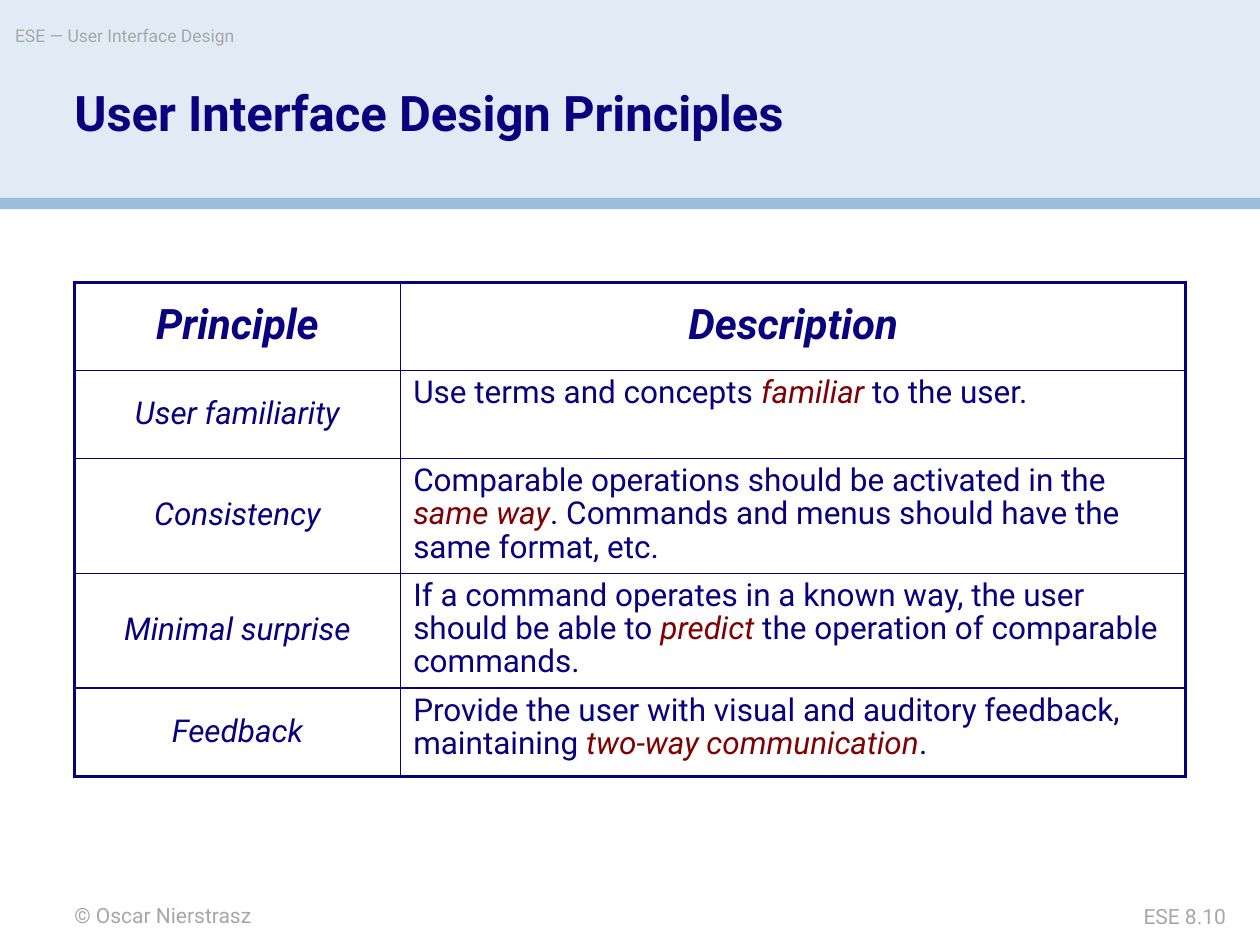
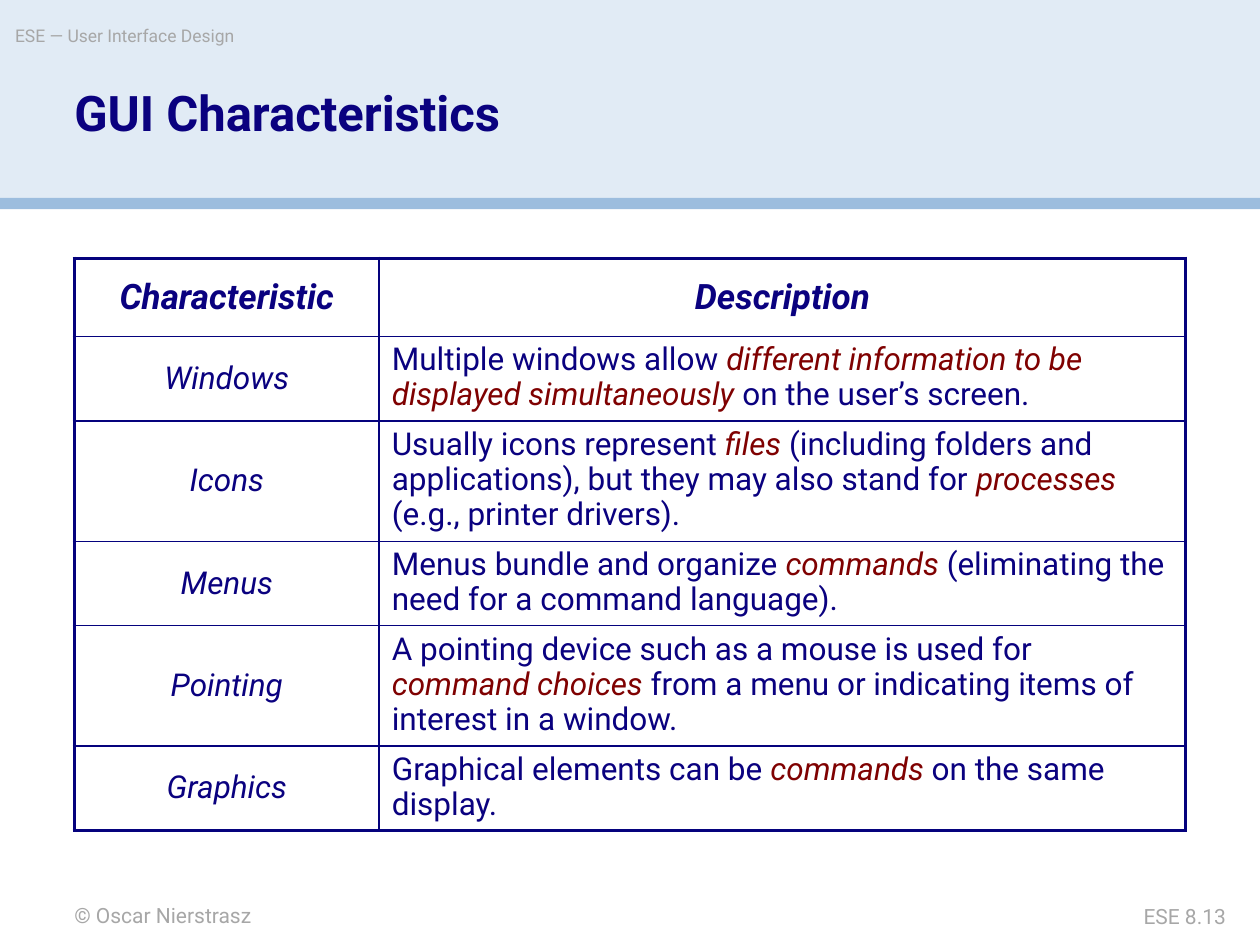
"""Builds two slides on user interface design, each with a table of terms and descriptions."""
from lxml.etree import SubElement
from pptx import Presentation
from pptx.dml.color import RGBColor
from pptx.enum.shapes import MSO_SHAPE
from pptx.enum.text import MSO_ANCHOR, PP_ALIGN
from pptx.oxml.ns import qn
from pptx.util import Inches, Pt

FONT = "Roboto"
NAVY, MAROON, GREY, RULE = "0A017F", "7F0101", "A7A7A7", "05027D"
BANDS = [(0, 1.58, "E1EBF5"), (1.57, 0.09, "9CBDDE")]
MARGIN = 0.59
THIN, THICK = 1, 2.25

SLIDES = [
    {
        "title": "User Interface Design Principles",
        "number": "ESE 8.10",
        "top": 2.24,
        "columns": [2.59, 6.23],
        "heights": [0.7, 0.7, 0.89, 0.89, 0.7],
        "heading_size": 24,
        "spacing": 0.9,
        "rows": [
            ("Principle", "Description"),
            ("User familiarity", "Use terms and concepts *familiar* to the user."),
            ("Consistency", "Comparable operations should be activated in the *same way*. "
             "Commands and menus should have the same format, etc."),
            ("Minimal surprise", "If a command operates in a known way, the user should be "
             "able to *predict* the operation of comparable commands."),
            ("Feedback", "Provide the user with visual and auditory feedback, "
             "maintaining *two-way communication*."),
        ],
    },
    {
        "title": "GUI Characteristics",
        "number": "ESE 8.13",
        "top": 2.05,
        "columns": [2.42, 6.4],
        "heights": [0.62, 0.66, 0.94, 0.66, 0.94, 0.66],
        "heading_size": 20,
        "spacing": 0.95,
        "rows": [
            ("Characteristic", "Description"),
            ("Windows", "Multiple windows allow *different information to be displayed "
             "simultaneously* on the user’s screen."),
            ("Icons", "Usually icons represent *files* (including folders and applications), "
             "but they may also stand for *processes* (e.g., printer drivers)."),
            ("Menus", "Menus bundle and organize *commands* (eliminating the need for "
             "a command language)."),
            ("Pointing", "A pointing device such as a mouse is used for *command choices* "
             "from a menu or indicating items of interest in a window."),
            ("Graphics", "Graphical elements can be *commands* on the same display."),
        ],
    },
]


def rgb(hex_colour):
    return RGBColor.from_string(hex_colour)


def add_run(paragraph, text, size, colour, bold=False, italic=False):
    run = paragraph.add_run()
    run.text = text
    run.font.name = FONT
    run.font.size = Pt(size)
    run.font.bold = bold
    run.font.italic = italic
    run.font.color.rgb = rgb(colour)


deck = Presentation()
deck.slide_width, deck.slide_height = Inches(10), Inches(7.5)

for content in SLIDES:
    slide = deck.slides.add_slide(deck.slide_layouts[6])

    for top, height, colour in BANDS:
        band = slide.shapes.add_shape(
            MSO_SHAPE.RECTANGLE, 0, Inches(top), deck.slide_width, Inches(height))
        band.shadow.inherit = False
        band.fill.solid()
        band.fill.fore_color.rgb = rgb(colour)
        band.line.fill.background()

    labels = [
        ("© Oscar Nierstrasz", (MARGIN, 7.16, 4.17, 0.2), 12, GREY, PP_ALIGN.LEFT, None),
        ("ESE — User Interface Design", (0.12, 0.2, 5.9, 0.28), 10, GREY, PP_ALIGN.LEFT, None),
        (content["number"], (8.25, 7.17, 1.48, 0.2), 12, GREY, PP_ALIGN.RIGHT, None),
        (content["title"], (MARGIN, 0.71, 7.24, 0.89), 28, NAVY, PP_ALIGN.LEFT, 0.9),
    ]
    for text, place, size, colour, alignment, spacing in labels:
        frame = slide.shapes.add_textbox(*map(Inches, place)).text_frame
        frame.word_wrap = True
        frame.margin_left = frame.margin_right = frame.margin_top = frame.margin_bottom = 0
        paragraph = frame.paragraphs[0]
        paragraph.alignment = alignment
        paragraph.line_spacing = spacing
        add_run(paragraph, text, size, colour, bold=colour == NAVY)

    rows, columns = content["rows"], content["columns"]
    last_row, last_column = len(rows) - 1, len(columns) - 1
    table = slide.shapes.add_table(
        len(rows), len(columns), Inches(MARGIN), Inches(content["top"]),
        Inches(sum(columns)), Inches(sum(content["heights"]))).table
    table.first_row = table.horz_banding = False
    for column, width in zip(table.columns, columns):
        column.width = Inches(width)
    for row, height in zip(table.rows, content["heights"]):
        row.height = Inches(height)

    for r, entries in enumerate(rows):
        for c, entry in enumerate(entries):
            cell = table.cell(r, c)
            heading = r == 0
            centred = heading or c == 0
            cell.vertical_anchor = MSO_ANCHOR.MIDDLE if centred else MSO_ANCHOR.TOP
            paragraph = cell.text_frame.paragraphs[0]
            paragraph.alignment = PP_ALIGN.CENTER if centred else PP_ALIGN.LEFT
            paragraph.line_spacing = content["spacing"]
            size = content["heading_size"] if heading else 18
            for position, part in enumerate(entry.split("*")):
                emphasis = position % 2 == 1
                add_run(paragraph, part, size, MAROON if emphasis else NAVY,
                        bold=heading, italic=centred or emphasis)

            properties = cell._tc.get_or_add_tcPr()
            outer_edges = {"L": c == 0, "R": c == last_column, "T": r == 0, "B": r == last_row}
            for side, outer in outer_edges.items():
                border = SubElement(properties, qn(f"a:ln{side}"),
                                    w=str(Pt(THICK if outer else THIN)))
                paint = SubElement(border, qn("a:solidFill"))
                SubElement(paint, qn("a:srgbClr"), val=RULE)
            cell.fill.background()

deck.save("out.pptx")
